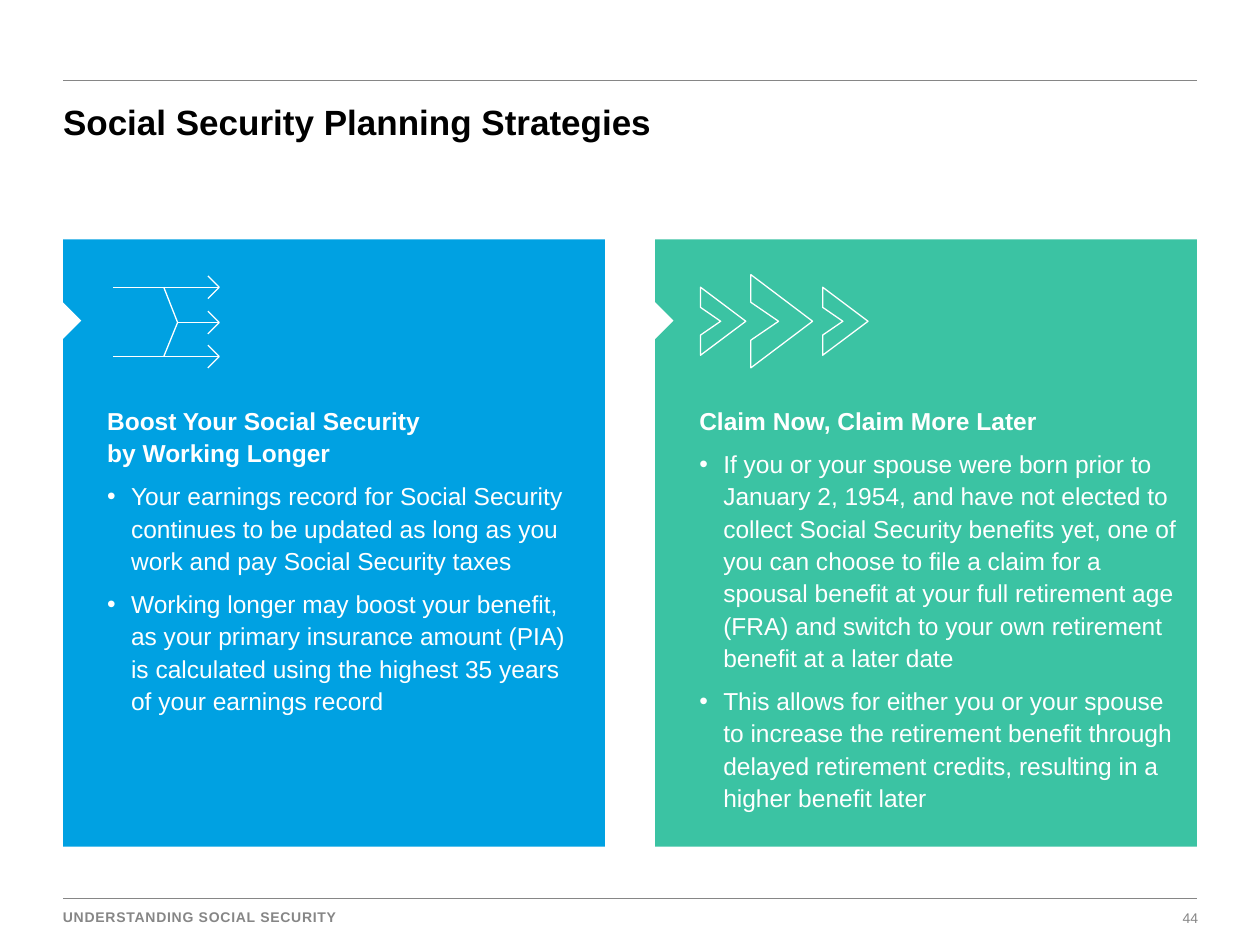
from lxml import etree
from pptx import Presentation
from pptx.dml.color import RGBColor
from pptx.enum.shapes import MSO_CONNECTOR, MSO_SHAPE
from pptx.enum.text import MSO_ANCHOR as Anchor, MSO_AUTO_SIZE as AutoSize, PP_ALIGN as Align
from pptx.oxml.ns import qn
from pptx.util import Inches, Pt

BLACK = RGBColor(0x00, 0x00, 0x00)
WHITE = RGBColor(0xFF, 0xFF, 0xFF)
GRAY = RGBColor(0x86, 0x86, 0x86)
BLUE = RGBColor(0x00, 0xA1, 0xE2)
GREEN = RGBColor(0x3B, 0xC3, 0xA3)

PANEL_TOP = 1.9
ICON_MIDDLE = 2.55

BOOST_POINTS = [
    "Your earnings record for Social Security continues to be updated as long as you "
    "work and pay Social Security taxes",
    "Working longer may boost your benefit, as your primary insurance amount (PIA) is "
    "calculated using the highest 35 years \nof your earnings record",
]
CLAIM_POINTS = [
    "If you or your spouse were born prior to January 2, 1954, and have not elected to "
    "collect Social Security benefits yet, one of you can choose to file a claim for a "
    "spousal benefit at your full retirement age (FRA) and switch to your own retirement "
    "benefit at a later date",
    "This allows for either you or your spouse to increase the retirement benefit through "
    "delayed retirement credits, resulting in a higher benefit later",
]


def place(shape, left, top, width, height):
    """Move and size a shape, in inches."""
    shape.left, shape.top = Inches(left), Inches(top)
    shape.width, shape.height = Inches(width), Inches(height)


def set_frame(frame, left=0, top=0, right=0, bottom=0, wrap=True):
    """Set the insets of a top-anchored text frame of fixed size."""
    frame.margin_left, frame.margin_top = Inches(left), Inches(top)
    frame.margin_right, frame.margin_bottom = Inches(right), Inches(bottom)
    frame.word_wrap = wrap
    frame.auto_size = AutoSize.NONE
    frame.vertical_anchor = Anchor.TOP


def set_font(paragraph, size, color, bold=False):
    """Format the font of a whole paragraph."""
    font = paragraph.font
    font.name, font.size, font.bold = "Arial", Pt(size), bold
    font.color.rgb = color


def set_bullet(paragraph, left, hanging=0, bullet=None):
    """Indent a paragraph and give it a white bullet or none."""
    properties = paragraph._p.get_or_add_pPr()
    properties.set("marL", str(Inches(left)))
    properties.set("indent", str(-Inches(hanging)))
    if bullet is None:
        etree.SubElement(properties, qn("a:buNone"))
        return
    color = etree.SubElement(properties, qn("a:buClr"))
    etree.SubElement(color, qn("a:srgbClr")).set("val", str(WHITE))
    etree.SubElement(properties, qn("a:buFont")).set("typeface", "Arial")
    etree.SubElement(properties, qn("a:buChar")).set("char", bullet)


def add_line(slide, start, end, color, width):
    """Draw a straight line without a shadow."""
    line = slide.shapes.add_connector(
        MSO_CONNECTOR.STRAIGHT, *(Inches(value) for value in (*start, *end))
    )
    line.line.color.rgb = color
    line.line.width = Pt(width)
    etree.SubElement(line._element.spPr, qn("a:effectLst"))


def add_outline(slide, contours, close):
    """Draw white contours as one unfilled freeform."""
    contours = [[(Inches(x), Inches(y)) for x, y in contour] for contour in contours]
    builder = slide.shapes.build_freeform(*contours[0][0])
    for index, (first, *rest) in enumerate(contours):
        if index:
            builder.move_to(*first)
        builder.add_line_segments(rest, close=close)
    shape = builder.convert_to_shape()
    shape.shadow.inherit = False
    shape.fill.background()
    shape.line.color.rgb = WHITE
    shape.line.width = Pt(0.75)


def add_label(slide, text, box, align, bold=False, spacing=None):
    """Add a small gray footer label."""
    label = slide.shapes.add_textbox(*(Inches(value) for value in box))
    set_frame(label.text_frame, wrap=False)
    paragraph = label.text_frame.paragraphs[0]
    paragraph.text = text
    paragraph.alignment = align
    set_font(paragraph, 8, GRAY, bold)
    if spacing:
        paragraph.runs[0]._r.get_or_add_rPr().set("spc", str(spacing))


def fill_title(title, text):
    """Place and format the slide title."""
    place(title, 0.5, 0.8, 8.99, 0.34)
    set_frame(title.text_frame)
    paragraph = title.text_frame.paragraphs[0]
    paragraph.text = text
    paragraph.alignment = Align.LEFT
    set_font(paragraph, 20, BLACK, bold=True)


def fill_panel(slide, panel, left, color, heading, points, right_inset):
    """Turn a body placeholder into a coloured panel with a notch."""
    place(panel, left, PANEL_TOP, 4.3, 4.82)
    panel.fill.solid()
    panel.fill.fore_color.rgb = color
    frame = panel.text_frame
    set_frame(frame, 0.1, 1.3, right_inset, 0.1)
    for index, text in enumerate([heading, *points]):
        paragraph = frame.add_paragraph() if index else frame.paragraphs[0]
        paragraph.text = text
        paragraph.line_spacing = 1.1
        paragraph.space_before = Pt(6 if index else 0)
        if index:
            set_bullet(paragraph, 0.44, 0.19, "•")
        else:
            set_bullet(paragraph, 0.25)
        set_font(paragraph, 14, WHITE, bold=index == 0)

    notch = slide.shapes.add_shape(MSO_SHAPE.ISOSCELES_TRIANGLE, 0, 0, 0, 0)
    place(notch, left - 0.08, 2.47, 0.3, 0.15)
    notch.rotation = 90
    notch.shadow.inherit = False
    notch.fill.solid()
    notch.fill.fore_color.rgb = WHITE
    notch.line.fill.background()


def add_branching_arrows(slide):
    """Draw three parallel arrows joined by a branch."""
    tip, head, left, branch, joint = 1.74, 0.09, 0.9, 1.3, 1.41
    top, middle, bottom = levels = 2.28, 2.56, 2.83
    heads = [[(tip - head, y - head), (tip, y), (tip - head, y + head)] for y in levels]
    fork = [(branch, top), (joint, middle), (branch, bottom)]
    for y, start in zip(levels, (left, joint, left)):
        add_line(slide, (start, y), (tip, y), WHITE, 0.75)
    add_outline(slide, [*heads, fork], close=False)


def chevron(left, width, half_height, notch_width, notch_half):
    """Return the corners of a chevron centred on the icon row."""
    right_half = [(0, -half_height), (width, 0), (0, half_height)]
    notch = [(0, notch_half), (notch_width, 0), (0, -notch_half)]
    return [(left + x, ICON_MIDDLE + y) for x, y in right_half + notch]


def add_chevrons(slide):
    """Draw a large chevron between two small ones."""
    small = (0.36, 0.27, 0.16, 0.11)
    large = (0.49, 0.37, 0.22, 0.15)
    contours = [chevron(5.56, *small), chevron(5.96, *large), chevron(6.53, *small)]
    add_outline(slide, contours, close=True)


def main():
    """Build and save the slide."""
    presentation = Presentation()
    presentation.slide_width, presentation.slide_height = Inches(10), Inches(7.5)
    slide = presentation.slides.add_slide(presentation.slide_layouts[3])
    title, left_panel, right_panel = slide.placeholders

    for y in (0.64, 7.13):
        add_line(slide, (0.5, y), (9.5, y), GRAY, 1)
    add_label(slide, "44", (9.37, 7.22, 0.14, 0.13), Align.RIGHT)
    add_label(slide, "UNDERSTANDING SOCIAL SECURITY", (0.5, 7.21, 3.1, 0.15),
              Align.LEFT, bold=True, spacing=40)

    fill_title(title, "Social Security Planning Strategies")
    fill_panel(slide, left_panel, 0.5, BLUE,
               "Boost Your Social Security\nby Working Longer", BOOST_POINTS, 0.12)
    fill_panel(slide, right_panel, 5.2, GREEN,
               "Claim Now, Claim More Later", CLAIM_POINTS, 0.1)
    add_branching_arrows(slide)
    add_chevrons(slide)
    presentation.save("out.pptx")


if __name__ == "__main__":
    main()
